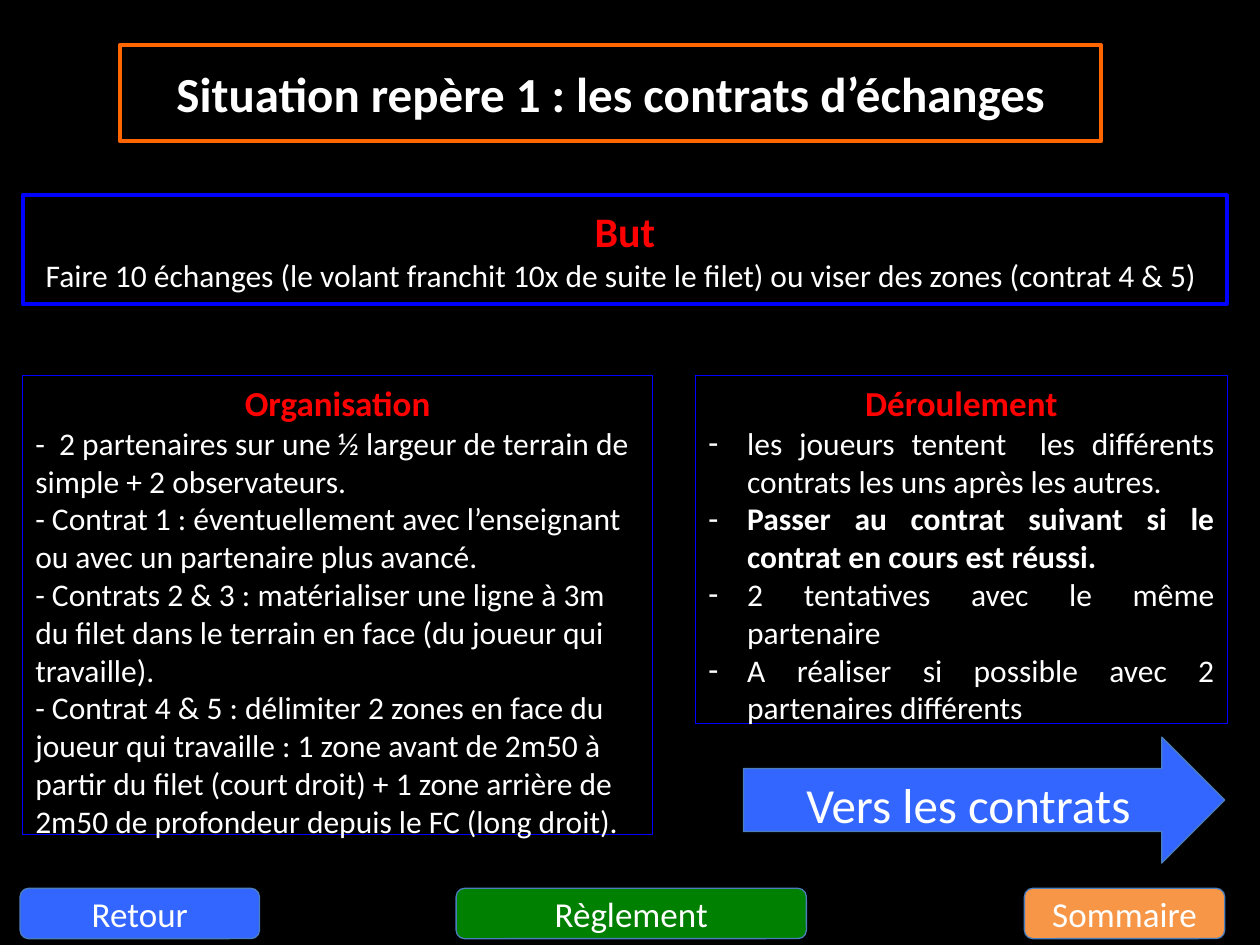
from lxml.etree import SubElement
from pptx import Presentation
from pptx.dml.color import RGBColor
from pptx.enum.shapes import MSO_SHAPE as Preset
from pptx.enum.text import MSO_ANCHOR as Anchor, MSO_AUTO_SIZE as AutoSize, PP_ALIGN as Align
from pptx.oxml.ns import qn
from pptx.util import Inches, Pt

WIDTH, HEIGHT = Inches(10), Inches(7.5)
TWO_CONTENT = 3
BLACK, WHITE, RED = "000000", "FFFFFF", "FF0000"
BLUE, ORANGE, EDGE = "0000FF", "FF6600", "4B7EBC"
SKY, GREEN, PEACH = "3366FF", "008000", "F79646"

ORGANISATION = [
    "-  2 partenaires sur une ½ largeur de terrain de simple + 2 observateurs.",
    "- Contrat 1 : éventuellement avec l’enseignant ou avec un partenaire plus avancé.",
    "- Contrats 2 & 3 : matérialiser une ligne à 3m du filet dans le terrain en face "
    "(du joueur qui travaille).",
    "- Contrat 4 & 5 : délimiter 2 zones en face du joueur qui travaille : 1 zone avant "
    "de 2m50 à partir du filet (court droit) + 1 zone arrière de 2m50 de profondeur "
    "depuis le FC (long droit).",
]
STEPS = [
    "les joueurs tentent  les différents contrats les uns après les autres. ",
    "Passer au contrat suivant si le contrat en cours est réussi. ",
    "2 tentatives avec le même partenaire ",
    "A réaliser si possible avec 2 partenaires différents",
]
KEY_STEP = STEPS[1]


def color(value):
    return RGBColor.from_string(value)


def box(left, top, width, height):
    return [int(side * share / 100) for side, share in
            zip((WIDTH, HEIGHT, WIDTH, HEIGHT), (left, top, width, height))]


def place(shape, area):
    shape.left, shape.top, shape.width, shape.height = area


def outline(shape, line, weight):
    shape.line.color.rgb = color(line)
    shape.line.width = Pt(weight)


def style(paragraph, size, ink=WHITE, bold=False, align=Align.CENTER):
    paragraph.alignment = align
    paragraph.space_before = Pt(0)
    for run in paragraph.runs:
        run.font.name = "Calibri"
        run.font.size = Pt(size)
        run.font.bold = bold
        run.font.color.rgb = color(ink)


def set_bullet(paragraph, mark=None):
    properties = paragraph._p.get_or_add_pPr()
    indent = Inches(0.31) if mark else 0
    properties.set("marL", str(indent))
    properties.set("indent", str(-indent))
    if mark:
        SubElement(properties, qn("a:buFontTx"))
        SubElement(properties, qn("a:buChar")).set("char", mark)
    else:
        SubElement(properties, qn("a:buNone"))


def add_title(slide, text):
    title = slide.shapes.title
    place(title, box(9.5, 4.8, 77.9, 10.13))
    outline(title, ORANGE, 2.25)
    title.text_frame.text = text
    title.text_frame.vertical_anchor = Anchor.MIDDLE
    style(title.text_frame.paragraphs[0], 28, bold=True)


def add_shape(slide, preset, area, fill=None, line=EDGE, weight=0.75, anchor=Anchor.MIDDLE):
    shape = slide.shapes.add_shape(preset, *area)
    shape.shadow.inherit = False
    if fill:
        shape.fill.solid()
        shape.fill.fore_color.rgb = color(fill)
    else:
        shape.fill.background()
    outline(shape, line, weight)
    shape.text_frame.word_wrap = True
    shape.text_frame.vertical_anchor = anchor
    return shape


def add_goal(slide, heading, text):
    goal = add_shape(slide, Preset.RECTANGLE, box(1.8, 20.67, 95.6, 11.47),
                     line=BLUE, weight=2.25)
    goal.text_frame.text = f"{heading}\n{text}"
    first, second = goal.text_frame.paragraphs
    style(first, 24, RED, bold=True)
    style(second, 18)


def fill_panel(panel, area, heading, items, align, mark=None):
    place(panel, area)
    outline(panel, BLUE, 0.75)
    frame = panel.text_frame
    frame.text = "\n".join([heading, *items])
    frame.vertical_anchor = Anchor.TOP
    frame.auto_size = AutoSize.SHAPE_TO_FIT_TEXT
    first, *others = frame.paragraphs
    style(first, 20, RED, bold=True)
    set_bullet(first)
    for paragraph in others:
        style(paragraph, 18, bold=paragraph.text == KEY_STEP, align=align)
        set_bullet(paragraph, mark)


def add_button(slide, preset, area, text, fill, size=20, anchor=Anchor.MIDDLE):
    button = add_shape(slide, preset, area, fill, anchor=anchor)
    button.text_frame.text = text
    style(button.text_frame.paragraphs[0], size)


def main():
    presentation = Presentation()
    presentation.slide_width, presentation.slide_height = WIDTH, HEIGHT
    slide = presentation.slides.add_slide(presentation.slide_layouts[TWO_CONTENT])
    slide.background.fill.solid()
    slide.background.fill.fore_color.rgb = color(BLACK)

    add_title(slide, "Situation repère 1 : les contrats d’échanges")
    add_goal(slide, "But", "Faire 10 échanges (le volant franchit 10x de suite le filet) "
                           "ou viser des zones (contrat 4 & 5) ")
    fill_panel(slide.placeholders[1], box(1.8, 39.73, 50, 49.87),
               "Organisation", ORGANISATION, Align.LEFT)
    fill_panel(slide.placeholders[2], box(55.2, 39.73, 42.2, 38.13),
               "Déroulement", STEPS, Align.JUSTIFY, "-")
    add_button(slide, Preset.RIGHT_ARROW, box(59, 78, 38.2, 13.33),
               "Vers les contrats", SKY, 28, Anchor.TOP)
    for text, left, width, fill in [("Retour", 1.6, 19, SKY),
                                    ("Règlement", 36.2, 27.8, GREEN),
                                    ("Sommaire", 81.3, 15.9, PEACH)]:
        add_button(slide, Preset.ROUNDED_RECTANGLE, box(left, 94, width, 5.33), text, fill)

    presentation.save("out.pptx")


if __name__ == "__main__":
    main()
